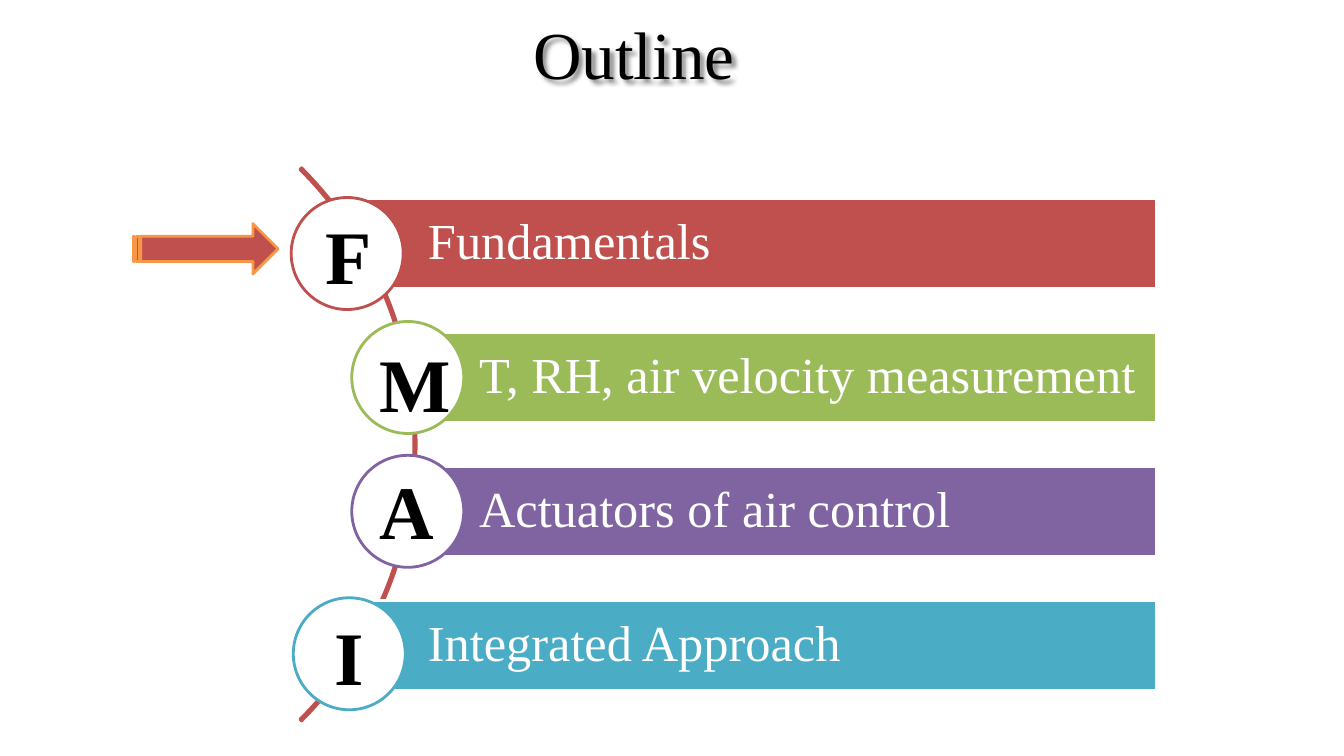
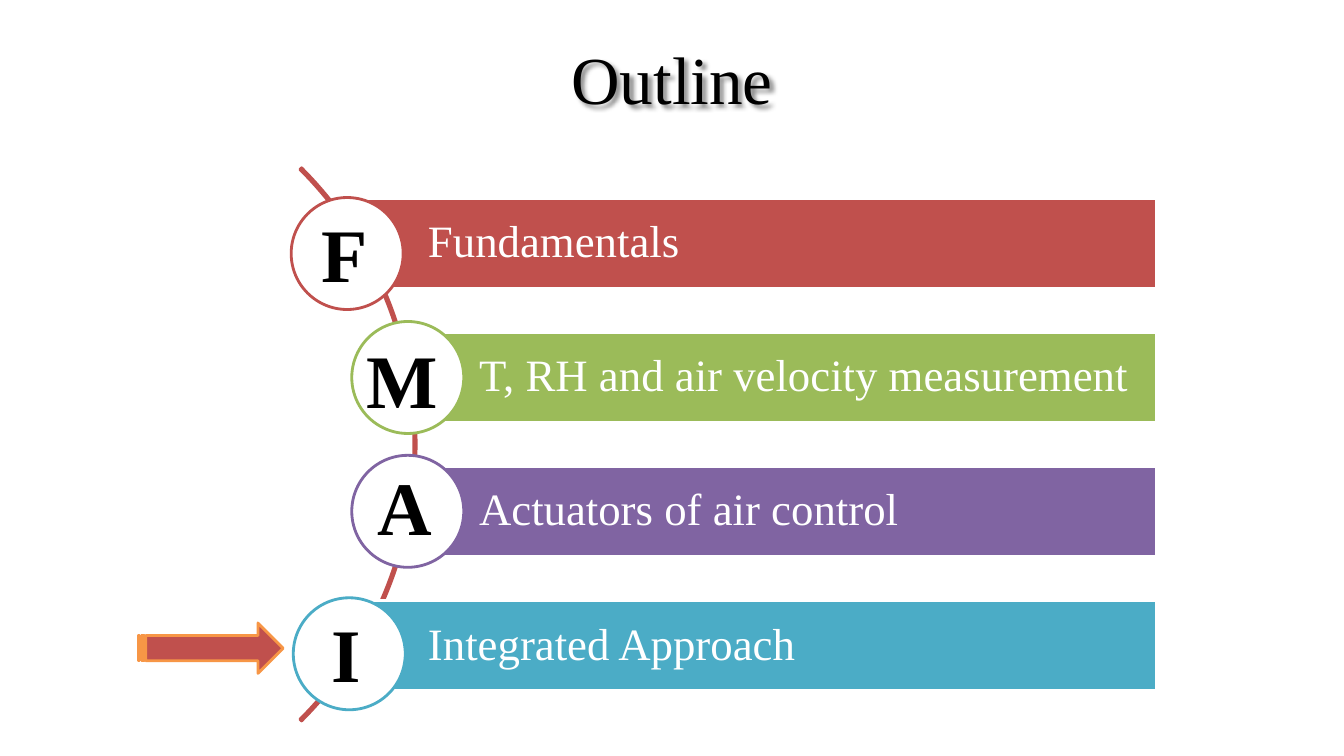
from lxml import etree
from pptx import Presentation
from pptx.dml.color import RGBColor
from pptx.enum.shapes import MSO_SHAPE
from pptx.enum.text import MSO_ANCHOR, PP_ALIGN
from pptx.util import Pt

ARC, RECT = MSO_SHAPE.BLOCK_ARC, MSO_SHAPE.RECTANGLE
OVAL, ARROW = MSO_SHAPE.OVAL, MSO_SHAPE.STRIPED_RIGHT_ARROW
MIDDLE, LEFT, CENTER = MSO_ANCHOR.MIDDLE, PP_ALIGN.LEFT, PP_ALIGN.CENTER

FACE = "Times New Roman"
RED, GREEN, PURPLE, TEAL = "C0504D", "9BBB59", "8064A2", "4BACC6"
ORANGE, WHITE, BLACK = "F79646", "FFFFFF", "000000"

BOX = (208, 141.8, 617.8, 351.3)
BAR_H, DISC, ARC_D = 64, 80, 558.7
# letter, letter width, colour, bar indent, disc offset from the left end of the row
ROWS = [
    ("F", 54, RED, 47, (0, -0.7)),
    ("M", 43, GREEN, 83.5, (43.3, -7.9)),
    ("A", 60, PURPLE, 83.5, (43.3, -8.1)),
    ("I", 54, TEAL, 47, (1.5, -2.1)),
]
# spots: offset of each letter from its disc
SLIDES = [
    dict(title=(128.9, 4.3), arrow=(95, 159.8), size=36,
         measure="T, RH, air velocity measurement",
         spots=[(17.3, 4.3), (13, 7.2), (13, 2.9), (22.3, 5)]),
    dict(title=(156.2, 21.6), arrow=(98.6, 445), size=32,
         measure="T, RH and air velocity measurement",
         spots=[(14.4, 2.9), (3.6, 4.3), (11.5, 0), (20.2, 2.9)]),
]
SHADOW = """<a:effectLst xmlns:a="http://schemas.openxmlformats.org/drawingml/2006/main">
<a:outerShdw blurRad="38100" dist="38100" dir="2700000" algn="tl">
<a:srgbClr val="000000"><a:alpha val="43000"/></a:srgbClr>
</a:outerShdw></a:effectLst>"""


def rgb(code):
    return RGBColor.from_string(code)


def points(*sizes):
    return [Pt(size) for size in sizes]


def style(item, **looks):
    for key, look in looks.items():
        setattr(item, key, look)


def write(shape, text, size, color, bold=False, align=LEFT, **frame):
    style(shape.text_frame, word_wrap=True, **frame)
    para = shape.text_frame.paragraphs[0]
    para.text = text
    para.alignment = align
    style(para.font, name=FACE, size=Pt(size), bold=bold)
    para.font.color.rgb = rgb(color)
    return para


def draw(slide, kind, box, fill, line):
    shape = slide.shapes.add_shape(kind, *points(*box))
    shape.shadow.inherit = False
    if fill:
        shape.fill.solid()
        shape.fill.fore_color.rgb = rgb(fill)
    else:
        shape.fill.background()
    shape.line.color.rgb = rgb(line)
    shape.line.width = Pt(2)
    return shape


def head(slide, spot):
    title = slide.shapes.title
    left, top, width, height = points(*spot, 648, 67)
    style(title, left=left, top=top, width=width, height=height)
    write(title, "Outline", 48, BLACK, align=CENTER, vertical_anchor=MIDDLE)
    title._element.spPr.append(etree.fromstring(SHADOW))


def outline(slide, box, labels, size, spots):
    """Arc with one labelled bar and one lettered disc for each row."""
    left, top, width, height = box
    step = (height - BAR_H) / (len(ROWS) - 1)
    arc = draw(slide, ARC, (left - 469.4, top - 103.7, ARC_D, ARC_D), None, RED)
    for i, turn in enumerate((189, 27, 0.003)):
        arc.adjustments[i] = turn
    for i, (row, label, spot) in enumerate(zip(ROWS, labels, spots)):
        letter, wide, color, indent, (dx, dy) = row
        y = top + i * step
        bar = draw(slide, RECT, (left + indent, y, width - indent, BAR_H), color, WHITE)
        para = write(bar, label, size, WHITE, vertical_anchor=MIDDLE,
                     margin_left=Pt(50.7), margin_right=Pt(7))
        para.line_spacing = 0.9
        x, y = left + dx, y + dy
        draw(slide, OVAL, (x, y, DISC, DISC), WHITE, color)
        mark = slide.shapes.add_textbox(*points(x + spot[0], y + spot[1], wide, 72.7))
        write(mark, letter, 54, BLACK, bold=True)


def main():
    deck = Presentation()
    deck.slide_width, deck.slide_height = points(960, 540)
    for page in SLIDES:
        slide = deck.slides.add_slide(deck.slide_layouts[5])
        head(slide, page["title"])
        labels = ["Fundamentals", page["measure"],
                  "Actuators of air control", "Integrated Approach"]
        outline(slide, BOX, labels, page["size"], page["spots"])
        draw(slide, ARROW, (*page["arrow"], 103.7, 36), RED, ORANGE)
    deck.save("out.pptx")


if __name__ == "__main__":
    main()
